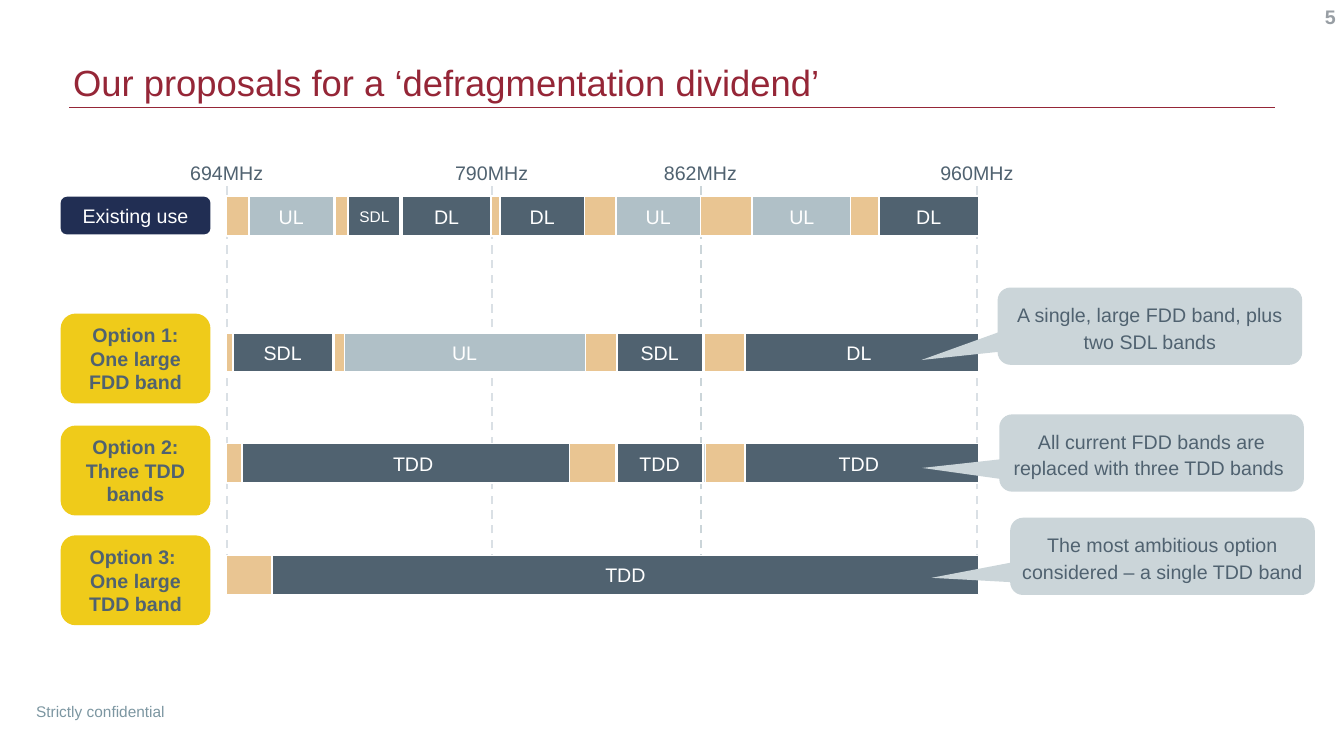
from copy import deepcopy

from lxml import etree
from pptx import Presentation
from pptx import util as u
from pptx.dml.color import RGBColor
from pptx.enum import dml, shapes, text
from pptx.oxml import ns

SLATE, SILVER, SAND, MIST = "506270", "B0C0C7", "E9C592", "CBD5D9"
WHITE, CRIMSON, NAVY, YELLOW = "FFFFFF", "952637", "212E53", "EFCB1A"
CENTER, LEFT, RIGHT = text.PP_ALIGN.CENTER, text.PP_ALIGN.LEFT, text.PP_ALIGN.RIGHT
TOP, MIDDLE, BOTTOM = text.MSO_ANCHOR.TOP, text.MSO_ANCHOR.MIDDLE, text.MSO_ANCHOR.BOTTOM
BAND_COLOURS = {"UL": SILVER, "SDL": SLATE, "DL": SLATE, "TDD": SLATE, "": SAND}
BAND_HEIGHT = 28

FREQUENCIES = [
    ("694MHz", 162, "DAE0E5"),
    ("790MHz", 351.2, "DAE0E5"),
    ("862MHz", 500.4, MIST),
    ("960MHz", 697.8, "DAE0E5"),
]

SPECTRUM_ROWS = [
    (140.5, [
        (162, 15.8, ""), (177.8, 60.5, "UL"), (239.8, 8.6, ""), (249.1, 36.7, "SDL"),
        (287.3, 63.4, "DL"), (350.6, 6.5, ""), (357.1, 60.5, "DL"), (417.6, 22.3, ""),
        (439.9, 60.5, "UL"), (500.4, 40.3, ""), (537.1, 71.3, "UL"), (607.7, 23.8, ""),
        (627.8, 71.3, "DL"),
    ]),
    (237.8, [
        (162, 4.3, ""), (166.3, 71.3, "SDL"), (245.5, 172.8, "UL"), (239, 7.2, ""),
        (418.3, 22.3, ""), (440.6, 61.2, "SDL"), (527.8, 171.4, "DL"), (503.3, 28.8, ""),
    ]),
    (317, [
        (162, 12.2, ""), (172.8, 244.8, "TDD"), (406.8, 33.1, ""),
        (440.6, 61.2, "TDD"), (527.8, 171.4, "TDD"), (503.3, 28.8, ""),
    ]),
    (396.7, [(162, 32.4, ""), (194.4, 504.7, "TDD")]),
]

OPTIONS = [
    ("Option 1:\nOne large FDD band", 224),
    ("Option 2:\nThree TDD bands", 304),
    ("Option 3: \nOne large TDD band", 382.4),
]

CALLOUTS = [
    ("A single, large FDD band, plus two SDL bands", 712.6, 205.4, -0.75, 0.438),
    ("All current FDD bands are replaced with three TDD bands ", 713.8, 296, -0.753, 0.193),
    ("The most ambitious option considered – a single TDD band", 721.6, 369.8, -0.758, 0.278),
]


def colour(value):
    """Turn a hex string into a colour."""
    return RGBColor.from_string(value)


def write(shape, content, size=14, ink=SLATE, bold=False, align=CENTER, anchor=MIDDLE,
          spacing=None, wrap=True, insets=(7.2, 3.6)):
    """Fill a shape with one formatted paragraph."""
    frame = shape.text_frame
    frame.word_wrap = wrap
    frame.vertical_anchor = anchor
    frame.margin_left = frame.margin_right = u.Pt(insets[0])
    frame.margin_top = frame.margin_bottom = u.Pt(insets[1])
    paragraph = frame.paragraphs[0]
    paragraph.text = content
    paragraph.alignment = align
    if spacing:
        paragraph.line_spacing = spacing
    for run in paragraph.runs:
        run.font.name = "Arial"
        run.font.size = u.Pt(size)
        run.font.bold = bold
        run.font.color.rgb = colour(ink)
    for line_break in paragraph._p.findall(ns.qn("a:br")):
        line_break.append(deepcopy(paragraph.runs[0]._r.rPr))


class SpectrumSlide:
    """Draw the elements of the spectrum chart on one slide."""

    def __init__(self, slide):
        """Keep the current slide."""
        self.slide = slide

    def label(self, content, left, top, width, height, **style):
        """Add a text box."""
        box = self.slide.shapes.add_textbox(*map(u.Pt, (left, top, width, height)))
        write(box, content, **style)

    def line(self, start, end, ink, width, dashed=False):
        """Add a straight line."""
        connector = self.slide.shapes.add_connector(
            shapes.MSO_CONNECTOR.STRAIGHT, *map(u.Pt, (*start, *end)))
        connector.line.color.rgb = colour(ink)
        connector.line.width = u.Pt(width)
        if dashed:
            connector.line.dash_style = dml.MSO_LINE.DASH
        etree.SubElement(connector._element.spPr, ns.qn("a:effectLst"))

    def block(self, kind, left, top, width, height, fill, outline=None):
        """Add a filled preset shape."""
        shape = self.slide.shapes.add_shape(kind, *map(u.Pt, (left, top, width, height)))
        shape.shadow.inherit = False
        shape.fill.solid()
        shape.fill.fore_color.rgb = colour(fill)
        if outline:
            shape.line.color.rgb = colour(outline)
            shape.line.width = u.Pt(1)
        else:
            shape.line.fill.background()
        return shape

    def band(self, left, top, width, name, fill=None):
        """Add one frequency band."""
        shape = self.block(shapes.MSO_SHAPE.RECTANGLE, left, top, width, BAND_HEIGHT,
                           fill or BAND_COLOURS[name], WHITE)
        if name:
            narrow = width < 40
            write(shape, name, size=11 if narrow else 14, ink=WHITE,
                  insets=(2, 3.6) if narrow else (7.2, 3.6))

    def tag(self, content, top, height, fill, **style):
        """Add a rounded row heading."""
        shape = self.block(shapes.MSO_SHAPE.ROUNDED_RECTANGLE, 43.3, top, 107, height, fill)
        write(shape, content, **style)

    def callout(self, content, left, top, tip_x, tip_y):
        """Add a rounded speech callout."""
        shape = self.block(shapes.MSO_SHAPE.ROUNDED_RECTANGULAR_CALLOUT,
                           left, top, 217.6, 55.2, MIST)
        shape.adjustments[0] = tip_x
        shape.adjustments[1] = tip_y
        write(shape, content, spacing=1.14, insets=(2.9, 2.9))


def main():
    """Build and save the slide."""
    presentation = Presentation()
    presentation.slide_width, presentation.slide_height = u.Pt(960), u.Pt(540)
    chart = SpectrumSlide(presentation.slides.add_slide(presentation.slide_layouts[6]))

    chart.line((49.3, 76.8), (910.8, 76.8), CRIMSON, 1)
    chart.label("Our proposals for a ‘defragmentation dividend’", 49.3, 0, 862.6, 76.8, size=26,
                ink=CRIMSON, align=LEFT, anchor=BOTTOM, spacing=u.Pt(36), insets=(2.9, 2.9))
    chart.label("5", 888.5, -2, 72.7, 28, ink="989EA4", bold=True, align=RIGHT)
    chart.label("Strictly confidential", 18.7, 485.3, 303.8, 39.6, size=11, ink="7C96A1",
                align=LEFT, anchor=TOP, spacing=u.Pt(26))

    for name, x, ink in FREQUENCIES:
        chart.line((x, 412.6), (x, 128.9), ink, 1.5, dashed=True)
        chart.label(name, x - 33.5, 111.6, 67, 24.4, anchor=TOP, wrap=False)

    for top, bands in SPECTRUM_ROWS:
        for left, width, name in bands:
            chart.band(left, top, width, name)
    chart.band(502.6, 317, 1.4, "", MIST)

    chart.tag("Existing use", 140.5, 26.9, NAVY, ink=WHITE)
    for content, top in OPTIONS:
        chart.tag(content, top, 64.2, YELLOW, bold=True)
    for callout in CALLOUTS:
        chart.callout(*callout)

    presentation.save("out.pptx")


if __name__ == "__main__":
    main()
